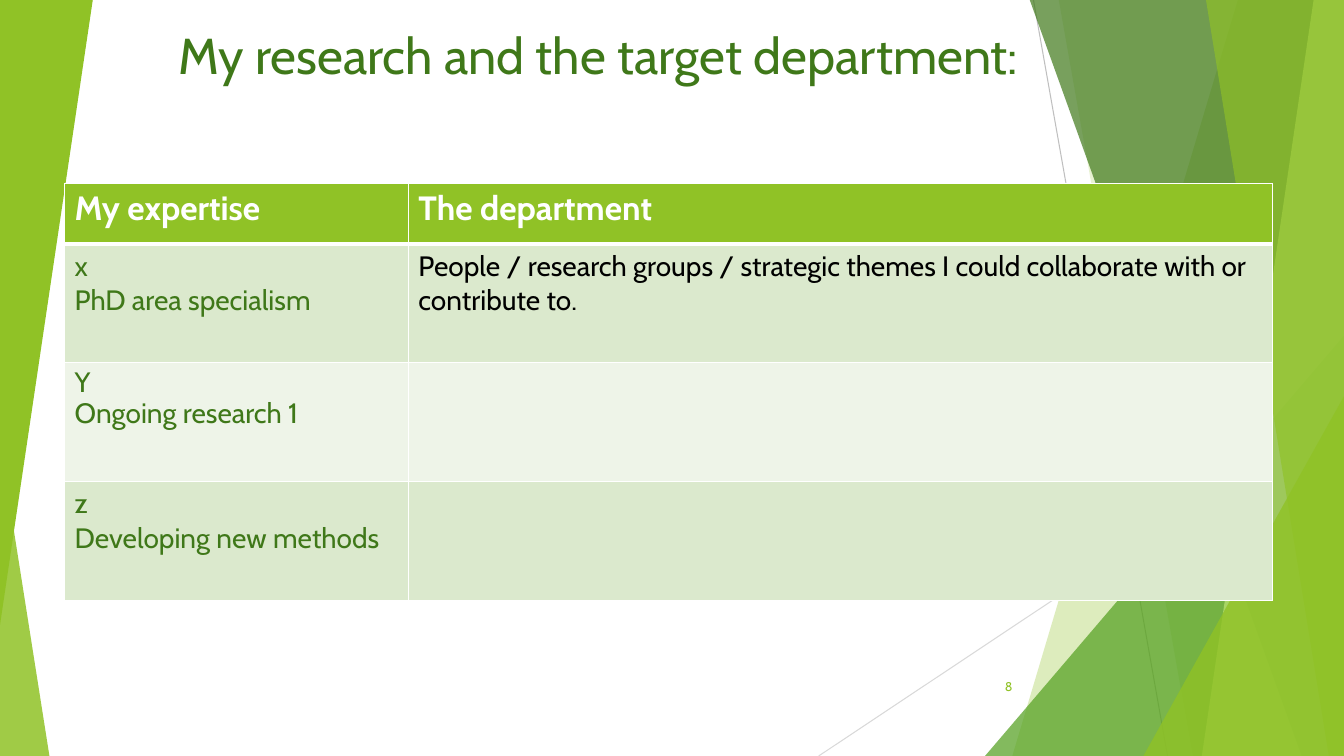
import pptx
import pptx.util
import pptx.oxml
import pptx.oxml.ns
import pptx.dml.color
import pptx.enum.shapes
import pptx.enum.text
import lxml.etree

RGBColor = pptx.dml.color.RGBColor
MSO_SHAPE = pptx.enum.shapes.MSO_SHAPE
PP_ALIGN = pptx.enum.text.PP_ALIGN
MSO_ANCHOR = pptx.enum.text.MSO_ANCHOR
qn = pptx.oxml.ns.qn

PX = 9144
WIDTH, HEIGHT = 1333, 750
FONT = "Cabin"

LIME = RGBColor(0x90, 0xC2, 0x26)
GREEN = RGBColor(0x54, 0xA0, 0x21)
FOREST = RGBColor(0x3F, 0x78, 0x19)
PALE_LIME = RGBColor(0xC0, 0xE4, 0x74)
BAND_DARK = RGBColor(0xDB, 0xE9, 0xCD)
BAND_LIGHT = RGBColor(0xEE, 0xF4, 0xE8)
GREY = RGBColor(0xBF, 0xBF, 0xBF)
LIGHT_GREY = RGBColor(0xD9, 0xD9, 0xD9)
WHITE = RGBColor(0xFF, 0xFF, 0xFF)
BLACK = RGBColor(0, 0, 0)


def px(*lengths):
    return [pptx.util.Emu(n * PX) for n in lengths]


def paint(shape, color, opacity):
    shape.shadow.inherit = False
    shape.line.fill.background()
    shape.fill.solid()
    shape.fill.fore_color.rgb = color
    if opacity < 100:
        clr = shape.fill._xPr.find(qn("a:solidFill"))[0]
        lxml.etree.SubElement(clr, qn("a:alpha"), val=str(opacity * 1000))


def add_line(s, x1, y1, x2, y2, color):
    line = s.shapes.add_connector(
        pptx.enum.shapes.MSO_CONNECTOR.STRAIGHT, *px(x1, y1, x2, y2))
    line.line.color.rgb = color
    line.line.width = pptx.util.Pt(0.75)
    lxml.etree.SubElement(line._element.spPr, qn("a:effectLst"))


def add_right_panel(s, top_x, bottom_x, color, opacity):
    fb = s.shapes.build_freeform(top_x, -1, scale=PX)
    fb.add_line_segments([(WIDTH, -1), (WIDTH, HEIGHT), (bottom_x, HEIGHT)])
    paint(fb.convert_to_shape(), color, opacity)


def add_triangle(s, x, y, w, h, apex, color, opacity, rotation=0):
    sp = s.shapes.add_shape(MSO_SHAPE.ISOSCELES_TRIANGLE, *px(x, y, w, h))
    sp.adjustments[0] = apex
    sp.rotation = rotation
    paint(sp, color, opacity)


def style_text(tf, size, color, bold=False, spacing=None):
    for p in tf.paragraphs:
        p.font.name = FONT
        p.font.size = pptx.util.Pt(size)
        p.font.bold = bold
        p.font.color.rgb = color
        if spacing:
            p.line_spacing = spacing


def add_title(s, text):
    title = s.shapes.title
    title.left, title.top, title.width, title.height = px(167, 19, 940, 144)
    tf = title.text_frame
    tf.text = text
    tf.vertical_anchor = MSO_ANCHOR.TOP
    tf.auto_size = pptx.enum.text.MSO_AUTO_SIZE.NONE
    style_text(tf, 36, FOREST)
    tf.paragraphs[0].alignment = PP_ALIGN.LEFT


def add_page_number(s, text):
    tf = s.shapes.add_textbox(*px(967, 661, 47, 40)).text_frame
    tf.word_wrap = True
    tf.vertical_anchor = MSO_ANCHOR.MIDDLE
    tf.text = text
    style_text(tf, 9, LIME)
    p = tf.paragraphs[0]
    p.alignment = PP_ALIGN.RIGHT
    p.space_after = pptx.util.Pt(6)


def set_borders(cell, top, bottom):
    tcPr = cell._tc.get_or_add_tcPr()
    for side, points in (("L", 1), ("R", 1), ("T", top), ("B", bottom)):
        ln = lxml.etree.SubElement(
            tcPr, qn("a:ln" + side), w=str(pptx.util.Pt(points)))
        fill = lxml.etree.SubElement(ln, qn("a:solidFill"))
        lxml.etree.SubElement(fill, qn("a:srgbClr"), val=str(WHITE))


def add_research_table(s, rows):
    table = s.shapes.add_table(len(rows), 2, *px(64, 182, 1198, 414)).table
    table.horz_banding = False
    table.columns[0].width, table.columns[1].width = px(341, 857)
    for i, texts in enumerate(rows):
        header = i == 0
        table.rows[i].height = px(60 if header else 118)[0]
        for j, text in enumerate(texts):
            cell = table.cell(i, j)
            set_borders(cell, 3 if i == 1 else 1, 3 if header else 1)
            cell.fill.solid()
            cell.fill.fore_color.rgb = (
                LIME if header else BAND_DARK if i % 2 else BAND_LIGHT)
            cell.text = text
            if header:
                style_text(cell.text_frame, 24, WHITE, bold=True)
            else:
                style_text(cell.text_frame, 20, BLACK if j else FOREST,
                           spacing=0.9 if i == 2 and j == 0 else None)


def add_facets(s):
    add_line(s, 1025, 0, 1158, HEIGHT, GREY)
    add_line(s, WIDTH, 403, 812, HEIGHT, LIGHT_GREY)
    add_right_panel(s, 1228, 1004, LIME, 30)
    add_right_panel(s, 1050, 1183, LIME, 20)
    add_triangle(s, 977, 333, 356, 417, 1, GREEN, 72)
    add_right_panel(s, 1021, 1291, FOREST, 70)
    add_right_panel(s, 1303, 1192, PALE_LIME, 70)
    add_right_panel(s, 1196, 1318, LIME, 65)
    add_triangle(s, 1134, 393, 199, 357, 1, LIME, 80)
    add_triangle(s, 0, 439, 49, 311, 0, LIME, 85)
    add_triangle(s, 0, 0, 92, 620, 1, LIME, 100, rotation=180)


def main():
    prs = pptx.Presentation()
    prs.slide_width, prs.slide_height = px(WIDTH, HEIGHT)
    s = prs.slides.add_slide(prs.slide_layouts[5])
    add_facets(s)
    add_title(s, "My research and the target department:")
    add_page_number(s, "8")
    add_research_table(s, [
        ("My expertise", "The department"),
        ("x\vPhD area specialism",
         "People / research groups / strategic themes I could collaborate "
         "with or contribute to."),
        ("Y\nOngoing research 1", ""),
        ("z\nDeveloping new methods", ""),
    ])
    prs.save("out.pptx")


if __name__ == "__main__":
    main()
